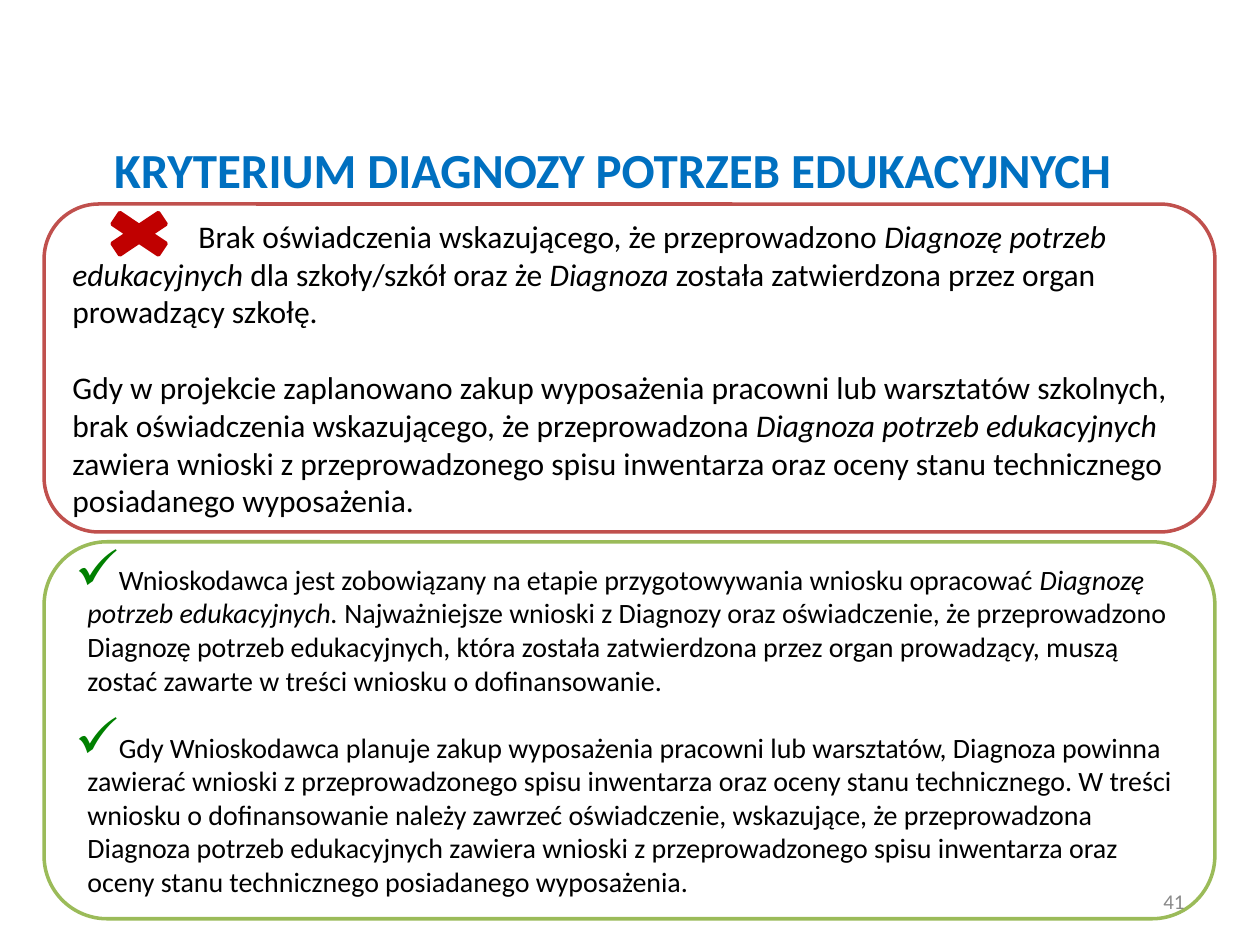
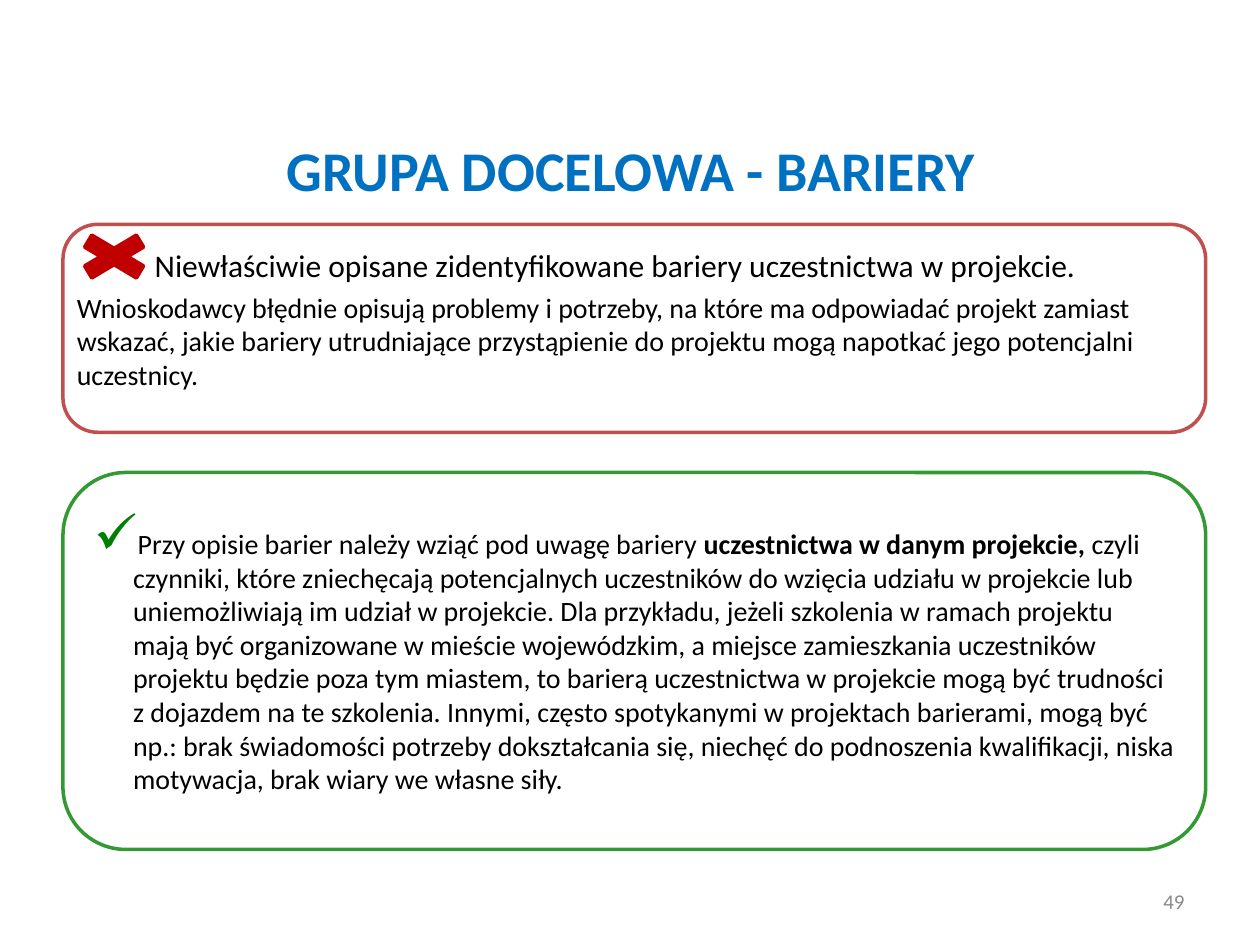
from dataclasses import dataclass, field

from lxml import etree
from pptx import Presentation
from pptx import util as u
from pptx.dml import color
from pptx.enum import shapes, text
from pptx.oxml import ns

FONT = "Calibri"
BLACK, BLUE, GREY = "000000", "0070C0", "898989"
RED_LINE, CROSS_RED, TICK_GREEN = "C0504D", "C00000", "008000"
TITLE_TOP, TITLE_HEIGHT = 77, 39.6
TITLE_ONLY, TITLE_AND_BODY = 5, 1


@dataclass
class Box:
    left: float
    top: float
    width: float
    height: float

    def lengths(self) -> list:
        return [u.Pt(v) for v in (self.left, self.top, self.width, self.height)]


@dataclass
class Run:
    text: str
    italic: bool = False
    bold: bool = False


@dataclass
class Para:
    runs: list[Run]
    size: float
    before: float = 0
    margin: float = 0
    indent: float = 0
    tick: bool = False


@dataclass
class Panel:
    box: Box
    line: str
    paras: list[Para] = field(default_factory=list)


@dataclass
class Page:
    title: str
    title_size: float
    title_left: float
    title_width: float
    number: str
    cross: Box
    panels: list[Panel]
    body_box: Box | None = None
    body: list[Para] = field(default_factory=list)


def rgb(value: str) -> color.RGBColor:
    return color.RGBColor.from_string(value)


def apply(target, **formats) -> None:
    for name, value in formats.items():
        setattr(target, name, value)


def add_run(p, content: str, size: float, hue: str, **formats) -> None:
    r = p.add_run()
    r.text = content
    apply(r.font, name=FONT, size=u.Pt(size), **formats)
    r.font.color.rgb = rgb(hue)


def set_bullet(p, para: Para) -> None:
    pPr = p._p.get_or_add_pPr()
    pPr.set("marL", str(int(u.Pt(para.margin))))
    pPr.set("indent", str(int(u.Pt(para.indent))))
    if not para.tick:
        etree.SubElement(pPr, ns.qn("a:buNone"))
        return
    hue = etree.SubElement(pPr, ns.qn("a:buClr"))
    etree.SubElement(hue, ns.qn("a:srgbClr"), val=TICK_GREEN)
    etree.SubElement(pPr, ns.qn("a:buSzPct"), val="200000")
    etree.SubElement(pPr, ns.qn("a:buChar"), char="✓")


def fill_text(tf, paras: list[Para]) -> None:
    apply(tf, word_wrap=True, auto_size=text.MSO_AUTO_SIZE.NONE)
    for i, para in enumerate(paras):
        p = tf.add_paragraph() if i else tf.paragraphs[0]
        apply(p, alignment=text.PP_ALIGN.LEFT, space_before=u.Pt(para.before))
        set_bullet(p, para)
        for run in para.runs:
            add_run(p, run.text, para.size, BLACK, italic=run.italic, bold=run.bold)


def place(sp, box: Box) -> None:
    apply(sp, **dict(zip(("left", "top", "width", "height"), box.lengths())))


def add_outlined(s, kind, box: Box, line: str, fill: str | None = None):
    sp = s.shapes.add_shape(kind, *box.lengths())
    sp.shadow.inherit = False
    if fill:
        sp.fill.solid()
        sp.fill.fore_color.rgb = rgb(fill)
    else:
        sp.fill.background()
    sp.line.color.rgb = rgb(line)
    sp.line.width = u.Pt(2)
    return sp


def add_title(s, page: Page) -> None:
    sp = s.shapes.title
    place(sp, Box(page.title_left, TITLE_TOP, page.title_width, TITLE_HEIGHT))
    tf = sp.text_frame
    apply(tf, word_wrap=True, auto_size=text.MSO_AUTO_SIZE.NONE,
          vertical_anchor=text.MSO_ANCHOR.MIDDLE)
    p = tf.paragraphs[0]
    p.alignment = text.PP_ALIGN.CENTER
    add_run(p, page.title, page.title_size, BLUE, bold=True)


def add_number(s, number: str) -> None:
    tf = s.shapes.add_textbox(*Box(516, 500.5, 168, 28.8).lengths()).text_frame
    apply(tf, word_wrap=True, vertical_anchor=text.MSO_ANCHOR.MIDDLE)
    p = tf.paragraphs[0]
    p.alignment = text.PP_ALIGN.RIGHT
    add_run(p, number, 12, GREY)


def build_page(prs, page: Page) -> None:
    layout = TITLE_AND_BODY if page.body else TITLE_ONLY
    s = prs.slides.add_slide(prs.slide_layouts[layout])
    add_title(s, page)
    if page.body:
        body = s.placeholders[1]
        place(body, page.body_box)
        fill_text(body.text_frame, page.body)
    for panel in page.panels:
        sp = add_outlined(s, shapes.MSO_SHAPE.ROUNDED_RECTANGLE, panel.box, panel.line)
        if panel.paras:
            fill_text(sp.text_frame, panel.paras)
    add_outlined(s, shapes.MSO_SHAPE.MATH_MULTIPLY, page.cross, CROSS_RED, CROSS_RED)
    add_number(s, page.number)


DIAGNOSIS = Page(
    "KRYTERIUM DIAGNOZY POTRZEB EDUKACYJNYCH", 28, 0, 700, "41",
    Box(54, 116.6, 51, 34),
    [
        Panel(Box(25.2, 116.6, 669, 187.4), RED_LINE, [
            Para([
                Run("Brak oświadczenia wskazującego, że przeprowadzono "),
                Run("Diagnozę potrzeb edukacyjnych", italic=True),
                Run(" dla szkoły/szkół oraz że "),
                Run("Diagnoza", italic=True),
                Run(" została zatwierdzona przez organ prowadzący szkołę."),
            ], 18, indent=72),
            Para([
                Run("Gdy w projekcie zaplanowano zakup wyposażenia pracowni lub "
                    "warsztatów szkolnych, brak oświadczenia wskazującego, że "
                    "przeprowadzona "),
                Run("Diagnoza potrzeb edukacyjnych ", italic=True),
                Run("zawiera wnioski z przeprowadzonego spisu inwentarza oraz oceny "
                    "stanu technicznego posiadanego wyposażenia."),
            ], 18, before=21.6),
        ]),
        Panel(Box(25.2, 309.6, 669, 215.4), "9BBB59", [
            Para([
                Run("Wnioskodawca jest zobowiązany na etapie przygotowywania wniosku "
                    "opracować "),
                Run("Diagnozę potrzeb edukacyjnych. ", italic=True),
                Run("Najważniejsze wnioski z Diagnozy oraz oświadczenie, że "
                    "przeprowadzono Diagnozę potrzeb edukacyjnych, która została "
                    "zatwierdzona przez organ prowadzący, muszą zostać zawarte w "
                    "treści wniosku o dofinansowanie."),
            ], 16, margin=7.2, indent=-7.2, tick=True),
            Para([
                Run("Gdy Wnioskodawca planuje zakup wyposażenia pracowni lub "
                    "warsztatów, Diagnoza powinna zawierać wnioski z "
                    "przeprowadzonego spisu inwentarza oraz oceny stanu "
                    "technicznego. W treści wniosku o dofinansowanie należy zawrzeć "
                    "oświadczenie, wskazujące, że przeprowadzona Diagnoza potrzeb "
                    "edukacyjnych zawiera wnioski z przeprowadzonego spisu "
                    "inwentarza oraz oceny stanu technicznego posiadanego "
                    "wyposażenia."),
            ], 16, before=19.2, margin=7.2, indent=-7.2, tick=True),
        ]),
    ],
)

BARRIERS = Page(
    "GRUPA DOCELOWA - BARIERY", 32, 36.7, 648, "49",
    Box(36.7, 129.6, 57, 34),
    [
        Panel(Box(36, 128.2, 653, 118.8), RED_LINE),
        Panel(Box(36, 270, 653, 215.4), "339933", [
            Para([
                Run("Przy opisie barier należy wziąć pod uwagę bariery "),
                Run("uczestnictwa w danym projekcie,", bold=True),
                Run(" czyli czynniki, które zniechęcają potencjalnych uczestników do "
                    "wzięcia udziału w projekcie lub uniemożliwiają im udział w "
                    "projekcie. Dla przykładu, jeżeli szkolenia w ramach projektu "
                    "mają być organizowane w mieście wojewódzkim, a miejsce "
                    "zamieszkania uczestników projektu będzie poza tym miastem, to "
                    "barierą uczestnictwa w projekcie mogą być trudności z dojazdem "
                    "na te szkolenia. Innymi, często spotykanymi w projektach "
                    "barierami, mogą być np.: brak świadomości potrzeby "
                    "dokształcania się, niechęć do podnoszenia kwalifikacji, niska "
                    "motywacja, brak wiary we własne siły."),
            ], 16, margin=22.5, indent=-22.5, tick=True),
        ]),
    ],
    Box(36.7, 137, 648, 108),
    [
        Para([Run("Niewłaściwie opisane zidentyfikowane bariery uczestnictwa w "
                  "projekcie.")], 18, indent=44.5),
        Para([Run("Wnioskodawcy błędnie opisują problemy i potrzeby, na które ma "
                  "odpowiadać projekt zamiast wskazać, jakie bariery utrudniające "
                  "przystąpienie do projektu mogą napotkać jego potencjalni "
                  "uczestnicy.")], 16, before=3.6),
    ],
)


def main() -> None:
    prs = Presentation()
    apply(prs, slide_width=u.Pt(720), slide_height=u.Pt(540))
    for page in (DIAGNOSIS, BARRIERS):
        build_page(prs, page)
    prs.save("out.pptx")


if __name__ == "__main__":
    main()
